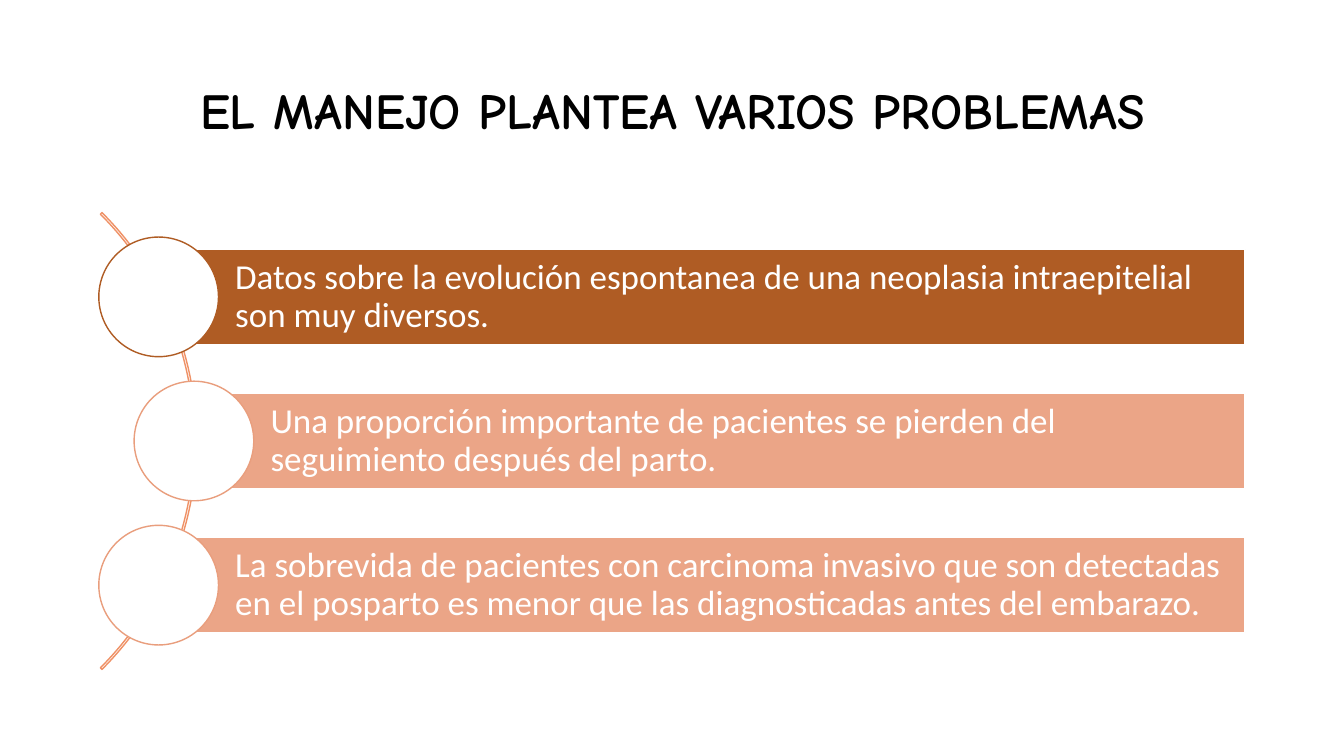
from pptx import Presentation, util as u
from pptx.dml.color import RGBColor
from pptx.enum import shapes, text

HUES = {"ink": "000000", "paper": "FFFFFF", "arc": "EF9166",
        "dark": "AF5C24", "light": "EBA587", "ring": "E99E7D"}
WIDE, HIGH = 13.33, 7.5
KIND = shapes.MSO_SHAPE

# Text, bar colour, ring colour, and shift of the circle along the arc
ITEMS = [
    ("Datos sobre la evolución espontanea de una neoplasia intraepitelial "
     "son muy diversos.", "dark", "dark", 0),
    ("Una proporción importante de pacientes se pierden del seguimiento "
     "después del parto.", "light", "ring", 0.35),
    ("La sobrevida de pacientes con carcinoma invasivo que son detectadas "
     "en el posparto es menor que las diagnosticadas antes del embarazo.",
     "light", "ring", 0),
]


def hue(name):
    return RGBColor.from_string(HUES[name])


def draw(slide, kind, box, fill, line):
    shape = slide.shapes.add_shape(kind, *map(u.Inches, box))
    shape.shadow.inherit = False
    if fill:
        shape.fill.solid()
        shape.fill.fore_color.rgb = hue(fill)
    else:
        shape.fill.background()
    shape.line.color.rgb = hue(line)
    shape.line.width = u.Pt(1)
    return shape


def write(shape, words, font, size, color, align, bold=False):
    frame = shape.text_frame
    frame.word_wrap = True
    frame.vertical_anchor = text.MSO_ANCHOR.MIDDLE
    frame.text = words
    para = frame.paragraphs[0]
    para.alignment = align
    para.line_spacing = 0.9
    style = para.runs[0].font
    style.name, style.size, style.bold = font, u.Pt(size), bold
    style.color.rgb = hue(color)
    return frame


def title(slide, box, words):
    shape = slide.shapes.add_textbox(*map(u.Inches, box))
    write(shape, words, "Comic Neue", 36, "ink", text.PP_ALIGN.CENTER, True)


def arc_list(slide, box, items):
    left, top, width, height = box
    step = height / len(items)
    disc, thick = step * 0.83, step * 0.66
    # Arc, centred on the height of the list
    size = 6.41
    arc = draw(slide, KIND.BLOCK_ARC,
               (left - 5.44, top + (height - size) / 2, size, size),
               None, "arc")
    for i, angle in enumerate((189, 27, 0.0035)):
        arc.adjustments[i] = angle
    for row, (words, fill, ring, shift) in enumerate(items):
        mid = top + step * (row + 0.5)
        edge = left + shift
        start = edge + disc / 2
        # Bar with its text
        bar = draw(slide, KIND.RECTANGLE,
                   (start, mid - thick / 2, left + width - start, thick),
                   fill, "paper")
        frame = write(bar, words, "Calibri", 25, "paper", text.PP_ALIGN.LEFT)
        frame.margin_left = u.Inches(0.76)
        frame.margin_right = u.Inches(0.07)
        frame.margin_top = frame.margin_bottom = u.Inches(0.07)
        # Circle over the bar's end
        draw(slide, KIND.OVAL, (edge, mid - disc / 2, disc, disc),
             "paper", ring)


def main():
    deck = Presentation()
    deck.slide_width, deck.slide_height = u.Inches(WIDE), u.Inches(HIGH)
    slide = deck.slides.add_slide(deck.slide_layouts[6])
    title(slide, (0.92, 0.4, 11.5, 1.45), "EL MANEJO PLANTEA VARIOS PROBLEMAS")
    arc_list(slide, (0.98, 2.23, 11.37, 4.29), ITEMS)
    deck.save("out.pptx")


if __name__ == "__main__":
    main()
